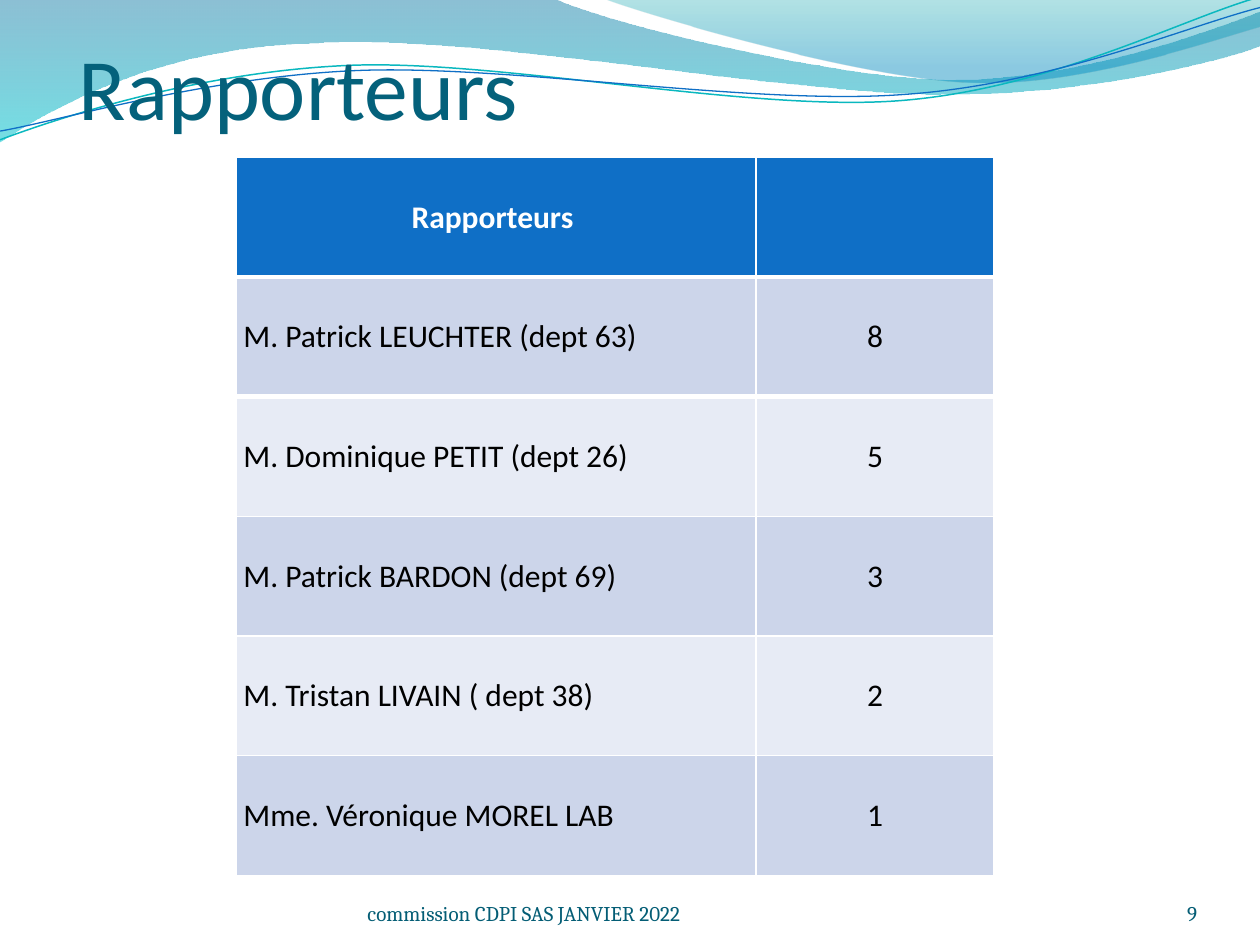
import lxml.etree
import pptx
import pptx.dml.color
import pptx.enum.text
import pptx.oxml.ns
import pptx.util

Pt = pptx.util.Pt
RGBColor = pptx.dml.color.RGBColor
ALIGN = pptx.enum.text.PP_ALIGN
ANCHOR = pptx.enum.text.MSO_ANCHOR
qn = pptx.oxml.ns.qn

WHITE = RGBColor(0xFF, 0xFF, 0xFF)
BLACK = RGBColor(0x00, 0x00, 0x00)
TITLE_TEAL = RGBColor(0x04, 0x61, 0x7B)
FOOTER_TEAL = RGBColor(0x04, 0x5D, 0x75)
BLUE = RGBColor(0x0F, 0x6F, 0xC6)
LINE_TEAL = RGBColor(0x0A, 0xB8, 0xBF)
BAND_TOP = RGBColor(0x00, 0x74, 0xA1)
BAND_BOTTOM = RGBColor(0x00, 0xC6, 0xCF)
CREST_TOP = RGBColor(0x00, 0xA1, 0xA9)
CREST_BOTTOM = RGBColor(0x00, 0x8B, 0xBF)
ROW_DARK = RGBColor(0xCC, 0xD5, 0xEA)
ROW_LIGHT = RGBColor(0xE7, 0xEB, 0xF5)

BAND = [
    [(-0.7, 0)], [(316.8, -0.7)],
    [(342.7, 12.2), (478.1, 45.4), (545.8, 45.4)],
    [(614.2, 45.4), (689.8, 18.7), (720, 6.5)],
    [(720.7, 25.9)],
    [(707.8, 31.7), (626.4, 54.7), (537.1, 54)],
    [(447.8, 54), (275, 20.2), (185, 24.5)],
    [(92.9, 25.9), (33.1, 59.8), (-0.7, 81.4)],
]
CREST = [
    [(344.9, -0.7)],
    [(366.5, 7.9), (491, 44.6), (553.7, 46.8)],
    [(616.3, 49.7), (691.9, 23), (720, 15.1)],
    [(720, -0.7)],
]
TEAL_WAVE = [
    [(0, 79.9)],
    [(34.6, 67), (113.8, 41), (199.4, 37.4)],
    [(284.4, 33.8), (427, 64.1), (513.4, 57.6)],
    [(599.8, 51.1), (675.4, 10.8), (718.6, -1.4)],
]
BLUE_WAVE = [
    [(0, 74.9)],
    [(33.8, 69.1), (118.1, 43.9), (203.8, 40.3)],
    [(290.2, 36.7), (429.8, 60.5), (516.2, 54)],
    [(601.9, 48.2), (677.5, 15.1), (720, 4.3)],
]
RAPPORTEURS = [
    (" M. Patrick LEUCHTER (dept 63)", "8"),
    (" M. Dominique PETIT (dept 26)", "5"),
    (" M. Patrick BARDON (dept 69)", "3"),
    (" M. Tristan LIVAIN ( dept 38)", "2"),
    (" Mme. Véronique MOREL LAB", "1"),
]


def add_outline(slide, left, top, segments, close):
    """Draw straight and cubic Bézier segments relative to left and top."""
    corners = [(Pt(left + x), Pt(top + y)) for x, y in (s[-1] for s in segments)]
    builder = slide.shapes.build_freeform(*corners[0], scale=1.0)
    builder.add_line_segments(corners[1:], close=close)
    outline = builder.convert_to_shape()
    outline.shadow.inherit = False
    for step, segment in zip(list(outline.element.iter(qn("a:lnTo"))), segments[1:]):
        if len(segment) == 3:
            step.tag = qn("a:cubicBezTo")
            for index, (x, y) in enumerate(segment[:-1]):
                control = step.makeelement(qn("a:pt"), {
                    "x": str(Pt(left + x) - outline.left),
                    "y": str(Pt(top + y) - outline.top)})
                step.insert(index, control)
    return outline


def add_wave_header(slide, left, top):
    """Draw the translucent waves and the two thin curves over them."""
    for segments, stops in (
        (BAND, ((0, BAND_TOP, 45), (1, BAND_BOTTOM, 55))),
        (CREST, ((0, CREST_TOP, 30), (0.8, CREST_BOTTOM, 45))),
    ):
        wave = add_outline(slide, left, top, segments, True)
        wave.line.fill.background()
        wave.fill.gradient()
        wave.fill.gradient_angle = 270
        for stop, (position, color, _) in zip(wave.fill.gradient_stops, stops):
            stop.position = position
            stop.color.rgb = color
        for rgb, (_, _, opacity) in zip(wave.element.spPr.iter(qn("a:srgbClr")), stops):
            lxml.etree.SubElement(rgb, qn("a:alpha")).set("val", str(opacity * 1000))
    for segments, color, width in (
        (TEAL_WAVE, LINE_TEAL, 0.85), (BLUE_WAVE, BLUE, 0.75),
    ):
        curve = add_outline(slide, left, top, segments, False)
        curve.fill.background()
        curve.line.color.rgb = color
        curve.line.width = Pt(width)


def style_text(frame, font_name, size, color, align=ALIGN.LEFT, bold=False):
    """Format the only paragraph of a text frame."""
    paragraph = frame.paragraphs[0]
    paragraph.alignment = align
    for run in paragraph.runs:
        run.font.name = font_name
        run.font.size = Pt(size)
        run.font.bold = bold
        run.font.color.rgb = color


def add_label(slide, left, top, width, height, text, font_name, size, color,
              align=ALIGN.LEFT, margin_top=0):
    """Place one bottom-anchored line of text."""
    box = slide.shapes.add_textbox(Pt(left), Pt(top), Pt(width), Pt(height))
    frame = box.text_frame
    frame.word_wrap = True
    frame.vertical_anchor = ANCHOR.BOTTOM
    frame.margin_left = frame.margin_right = frame.margin_bottom = 0
    frame.margin_top = Pt(margin_top)
    frame.text = text
    style_text(frame, font_name, size, color, align)


def add_cell_border(cell, side, width):
    """Give one side of a cell a white border."""
    properties = cell._tc.get_or_add_tcPr()
    border = properties.makeelement(qn("a:" + side), {"w": str(Pt(width))})
    fill = lxml.etree.SubElement(border, qn("a:solidFill"))
    lxml.etree.SubElement(fill, qn("a:srgbClr")).set("val", str(WHITE))
    properties.insert(0, border)


def add_rapporteur_table(slide, left, top, width, height):
    """Place the table of rapporteurs with their number of cases."""
    rows = [("Rapporteurs ", ""), *RAPPORTEURS]
    table = slide.shapes.add_table(
        len(rows), 2, Pt(left), Pt(top), Pt(width), Pt(height)).table
    count_width = 136
    table.columns[0].width = Pt(width - count_width)
    table.columns[1].width = Pt(count_width)
    for row_index, values in enumerate(rows):
        table.rows[row_index].height = Pt(height / len(rows))
        header = row_index == 0
        row_fill = BLUE if header else (ROW_LIGHT, ROW_DARK)[row_index % 2]
        for column_index, value in enumerate(values):
            name_cell = column_index == 0 and not header
            cell = table.cell(row_index, column_index)
            cell.fill.solid()
            cell.fill.fore_color.rgb = row_fill
            cell.vertical_anchor = ANCHOR.MIDDLE
            cell.margin_left = cell.margin_right = 0
            cell.margin_top = cell.margin_bottom = 0
            if value:
                cell.text_frame.text = value
                style_text(cell.text_frame, "Calibri", 18, WHITE if header else BLACK,
                           ALIGN.LEFT if name_cell else ALIGN.CENTER, header)
            if header:
                for side, weight in (("lnB", 3), ("lnT", 1), ("lnR", 1), ("lnL", 1)):
                    add_cell_border(cell, side, weight)
            elif row_index == 1:
                add_cell_border(cell, "lnT", 3)


def add_footer(slide, left, top, width, height):
    """Place the meeting name and the page number along the bottom."""
    number_width = 60
    add_label(slide, left, top, 264, height, "commission CDPI SAS JANVIER 2022",
              "Cambria", 12, FOOTER_TEAL)
    add_label(slide, left + width - number_width, top, number_width, height, "9",
              "Cambria", 12, FOOTER_TEAL, ALIGN.RIGHT)


def main():
    """Build the slide and save it."""
    deck = pptx.Presentation()
    deck.slide_width, deck.slide_height = Pt(720), Pt(540)
    slide = deck.slides.add_slide(deck.slide_layouts[6])
    add_wave_header(slide, 0, 0)
    add_label(slide, 45, 11.5, 648, 67.5, "Rapporteurs", "Calibri", 50, TITLE_TEAL,
              margin_top=3.6)
    add_rapporteur_table(slide, 135, 90, 433, 410.4)
    add_footer(slide, 210, 500.2, 474, 28.8)
    deck.save("out.pptx")


if __name__ == "__main__":
    main()
